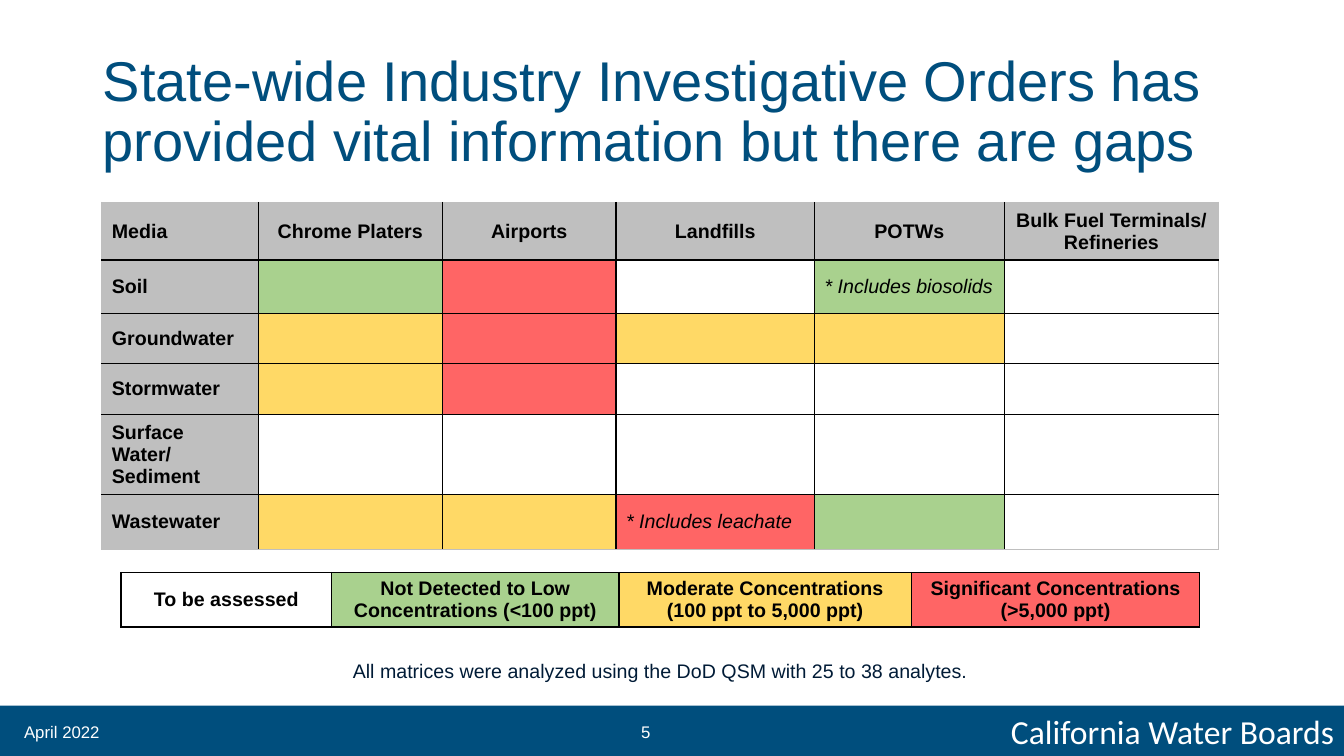
from lxml import etree
from pptx import Presentation
from pptx.dml.color import RGBColor
from pptx.enum import shapes, text
from pptx.oxml import ns
from pptx.util import Inches, Pt

COLORS = {
    "blue": "004E7D", "navy": "001B36", "black": "000000", "header": "BFBFBF",
    "open": "FFFFFF", "low": "A9D18E", "moderate": "FFD966", "high": "FF6565",
}
LEFT, CENTER, RIGHT = text.PP_ALIGN.LEFT, text.PP_ALIGN.CENTER, text.PP_ALIGN.RIGHT


def write(frame, words, size, color, align=LEFT, font="Arial", bold=None, italic=None):
    frame.word_wrap = True
    frame.vertical_anchor = text.MSO_ANCHOR.MIDDLE
    para = frame.paragraphs[0]
    para.alignment = align
    for index, line in enumerate(words.split("\n")):
        if index:
            para.add_line_break()
        span = para.add_run()
        span.text = line
        span.font.name, span.font.size = font, Pt(size)
        span.font.bold, span.font.italic = bold, italic
        span.font.color.rgb = RGBColor.from_string(COLORS[color])
    return para


def add_grid(left, top, widths, heights, cells, edge):
    frame = page.shapes.add_table(len(heights), len(widths), Inches(left), Inches(top),
                                  Inches(sum(widths)), Inches(sum(heights)))
    table = frame.table
    table.first_row = table.horz_banding = False
    for column, width in zip(table.columns, widths):
        column.width = Inches(width)
    for row, height in zip(table.rows, heights):
        row.height = Inches(height)
    last_row, last_column = len(heights) - 1, len(widths) - 1
    for r, row in enumerate(cells):
        for c, (words, fill, align, bold) in enumerate(row):
            cell = table.cell(r, c)
            properties = cell._tc.get_or_add_tcPr()
            outside = {"lnL": c == 0, "lnR": c == last_column,
                       "lnT": r == 0, "lnB": r == last_row}
            for side, is_edge in outside.items():
                line = etree.SubElement(properties, ns.qn(f"a:{side}"), w=str(Pt(1)))
                solid = etree.SubElement(line, ns.qn("a:solidFill"))
                etree.SubElement(solid, ns.qn("a:srgbClr"),
                                 val=COLORS[edge if is_edge else "black"])
            cell.fill.solid()
            cell.fill.fore_color.rgb = RGBColor.from_string(COLORS[fill])
            cell.vertical_anchor = text.MSO_ANCHOR.MIDDLE
            if words:
                write(cell.text_frame, words, 14, "black", align, bold=bold, italic=not bold)


deck = Presentation()
deck.slide_width, deck.slide_height = Inches(13.33), Inches(7.5)
page = deck.slides.add_slide(deck.slide_layouts[5])

footer = page.shapes.add_shape(shapes.MSO_SHAPE.RECTANGLE, 0, Inches(7),
                               Inches(13.33), Inches(0.5))
footer.shadow.inherit = False
footer.fill.solid()
footer.fill.fore_color.rgb = RGBColor.from_string(COLORS["blue"])
footer.line.fill.background()
write(footer.text_frame, "California Water Boards", 24, "open", RIGHT, "Calibri")

title = page.shapes.title
title.left, title.top = Inches(0.92), Inches(0.4)
title.width, title.height = Inches(11.5), Inches(1.45)
heading = write(title.text_frame, "State-wide Industry Investigative Orders has provided "
                "vital information but there are gaps", 40, "blue")
heading.line_spacing = 0.9

legend = [
    ("To be assessed", "open"),
    ("Not Detected to Low Concentrations (<100 ppt)", "low"),
    ("Moderate Concentrations\n(100 ppt to 5,000 ppt)", "moderate"),
    ("Significant Concentrations (>5,000 ppt)", "high"),
]
add_grid(1.2, 5.68, [2.09, 2.85, 2.9, 2.86], [0.54],
         [[(words, fill, CENTER, True) for words, fill in legend]], "black")

industries = ["Chrome Platers", "Airports", "Landfills", "POTWs",
              "Bulk Fuel Terminals/ Refineries"]
findings = {
    "Soil": ["low", "high", "open", "low", "open"],
    "Groundwater": ["moderate", "high", "moderate", "moderate", "open"],
    "Stormwater": ["moderate", "high", "open", "open", "open"],
    "Surface Water/ Sediment": ["open"] * 5,
    "Wastewater": ["moderate", "moderate", "high", "low", "open"],
}
remarks = {("Soil", "POTWs"): "* Includes biosolids",
           ("Wastewater", "Landfills"): "* Includes leachate"}
matrix = [[("Media", "header", LEFT, True)]
          + [(industry, "header", CENTER, True) for industry in industries]]
for media, levels in findings.items():
    matrix.append([(media, "header", LEFT, True)]
                  + [(remarks.get((media, industry), ""), level, LEFT, False)
                     for industry, level in zip(industries, levels)])
add_grid(1.01, 2.01, [1.55, 1.83, 1.72, 1.97, 1.88, 2.13],
         [0.57, 0.53, 0.5, 0.5, 0.8, 0.54], matrix, "header")

captions = [
    ("All matrices were analyzed using the DoD QSM with 25 to 38 analytes.",
     1.01, 6.48, 11.08, 0.34, 14, "navy", CENTER),
    ("5", 6.26, 7.06, 0.75, 0.4, 12, "open", LEFT),
    ("April 2022", 0.14, 7.06, 1.71, 0.4, 12, "open", LEFT),
]
for words, left, top, width, height, size, color, align in captions:
    box = page.shapes.add_textbox(Inches(left), Inches(top), Inches(width), Inches(height))
    write(box.text_frame, words, size, color, align)

deck.save("out.pptx")
